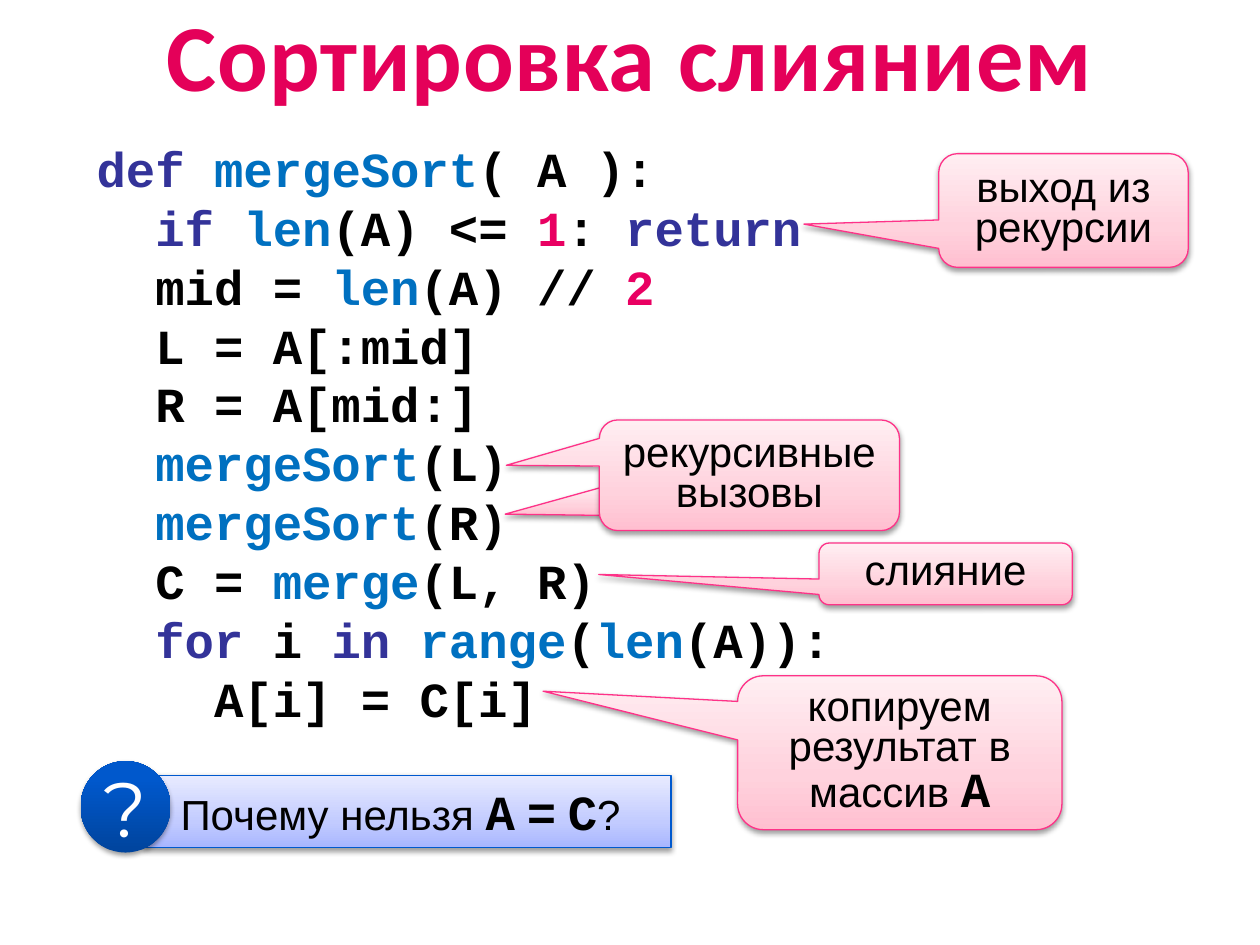
"""Build a slide on merge sort: annotated code, callouts and a question."""
from dataclasses import dataclass

from lxml import etree
from pptx import Presentation
from pptx.dml.color import RGBColor
from pptx.enum import shapes, text
from pptx.oxml import ns
from pptx.util import Pt


@dataclass(frozen=True)
class Theme:
    black: str = "000000"
    white: str = "FFFFFF"
    keyword: str = "333399"
    name: str = "0070C0"
    number: str = "E90062"
    title: str = "E40059"
    pink_line: str = "FE3288"
    blue_line: str = "0059CE"
    pink: tuple = ((0, "FFBFD0"), (35, "FFD2DD"), (100, "FFEEF2"))
    blue: tuple = ((0, "A8B6FF"), (35, "C2CBFF"), (100, "E8EBFF"))
    deep_blue: tuple = ((0, "00449D"), (80, "0058CC"), (100, "0059CD"))
    body: tuple = ("Arial", 24, False)
    code: tuple = ("Courier New", 28, True)
    heading: tuple = ("Calibri", 54, True)
    mark: tuple = ("Montserrat", 44, False)


T = Theme()


def add_run(p, words, style, colour=T.black):
    r = p.add_run()
    r.text = words
    r.font.name, size, r.font.bold = style
    r.font.size = Pt(size)
    r.font.color.rgb = RGBColor.from_string(colour)
    return r


def decorate(sp, stops, line=None):
    sp.fill.gradient()
    sp.fill.gradient_angle = 90
    stop_list = sp._element.spPr.find(".//" + ns.qn("a:gsLst"))
    stop_list.clear()
    for position, colour in stops:
        gs = etree.SubElement(stop_list, ns.qn("a:gs"), pos=str(position * 1000))
        etree.SubElement(gs, ns.qn("a:srgbClr"), val=colour)
    if line:
        sp.line.color.rgb = RGBColor.from_string(line)
        sp.line.width = Pt(0.75)
    else:
        sp.line.fill.background()
    sp.shadow.inherit = False
    effects = sp._element.spPr.find(ns.qn("a:effectLst"))
    shadow = etree.SubElement(effects, ns.qn("a:outerShdw"), blurRad=str(Pt(3.1)),
                              dist=str(Pt(1.6)), dir="5400000", rotWithShape="0")
    colour = etree.SubElement(shadow, ns.qn("a:srgbClr"), val=T.black)
    etree.SubElement(colour, ns.qn("a:alpha"), val="38000")


prs = Presentation()
prs.slide_width, prs.slide_height = Pt(720), Pt(540)
s = prs.slides.add_slide(prs.slide_layouts[5])

sp = s.shapes.title
sp.left, sp.top, sp.width, sp.height = Pt(0), Pt(0), Pt(720), Pt(61)
tf = sp.text_frame
tf.auto_size = text.MSO_AUTO_SIZE.NONE
tf.vertical_anchor = text.MSO_ANCHOR.MIDDLE
p = tf.paragraphs[0]
p.alignment = text.PP_ALIGN.CENTER
r = add_run(p, "Сортировка слиянием", T.heading, T.title)
r.font._element.set("spc", "50")

K, F, N, B = T.keyword, T.name, T.number, T.black
code_lines = [
    [("def ", K), ("mergeSort", F), ("( A ):", B)],
    [("  if ", K), ("len", F), ("(A) <= ", B), ("1", N), (": ", B), ("return", K)],
    [("  mid = ", B), ("len", F), ("(A) // ", B), ("2", N)],
    [("  L = A[:mid]", B)],
    [("  R = A[mid:]", B)],
    [("  mergeSort", F), ("(L)", B)],
    [("  mergeSort", F), ("(R)", B)],
    [("  C = ", B), ("merge", F), ("(L, R)", B)],
    [("  for ", K), ("i ", B), ("in ", K), ("range", F), ("(", B), ("len", F), ("(A)):", B)],
    [("    A[i] = C[i]", B)],
]
tf = s.shapes.add_textbox(Pt(48.2), Pt(75.6), Pt(499), Pt(346.3)).text_frame
tf.word_wrap = True
for i, line in enumerate(code_lines):
    p = tf.add_paragraph() if i else tf.paragraphs[0]
    for words, colour in line:
        add_run(p, words, T.code, colour)

builder = s.shapes.build_freeform(Pt(343.4), Pt(294.5))
builder.add_line_segments([(Pt(343.4), Pt(278.6)), (Pt(288.7), Pt(293.8))], close=True)
decorate(builder.convert_to_shape(), T.pink, T.pink_line)

callouts = [
    ((468, 310.3, 144.7, 35.3), (-1.37, 0.01), [("слияние", T.body)]),
    ((536.4, 87.8, 142.6, 65), (-1.04, 0.12), [("выход из рекурсии", T.body)]),
    ((342.5, 240, 171.5, 63.2), (-0.81, -0.09), [("рекурсивные вызовы", T.body)]),
    ((421.5, 386.2, 185.3, 87.9), (-1.1, -0.4),
     [("копируем результат в массив ", T.body), ("A", T.code)]),
]
for box, tip, runs in callouts:
    sp = s.shapes.add_shape(shapes.MSO_SHAPE.ROUNDED_RECTANGULAR_CALLOUT, *map(Pt, box))
    sp.adjustments[0], sp.adjustments[1] = tip
    decorate(sp, T.pink, T.pink_line)
    tf = sp.text_frame
    tf.word_wrap = True
    tf.vertical_anchor = text.MSO_ANCHOR.MIDDLE
    p = tf.paragraphs[0]
    p.alignment = text.PP_ALIGN.CENTER
    p.line_spacing = 0.8
    for words, style in runs:
        add_run(p, words, style)

sp = s.shapes.add_shape(shapes.MSO_SHAPE.RECTANGLE, Pt(82.8), Pt(443), Pt(300.6), Pt(41.2))
decorate(sp, T.blue, T.blue_line)
tf = sp.text_frame
tf.word_wrap = True
tf.vertical_anchor = text.MSO_ANCHOR.TOP
p = tf.paragraphs[0]
p.alignment = text.PP_ALIGN.LEFT
for words, style in [("  Почему нельзя ", T.body), ("A", T.code), (" ", T.body), ("=", T.code),
                     (" ", T.body), ("C", T.code), ("?", T.body)]:
    add_run(p, words, style)

sp = s.shapes.add_shape(shapes.MSO_SHAPE.OVAL, Pt(46), Pt(434.9), Pt(51.4), Pt(52.3))
decorate(sp, T.deep_blue)
tf = sp.text_frame
tf.word_wrap = False
tf.vertical_anchor = text.MSO_ANCHOR.MIDDLE
p = tf.paragraphs[0]
p.alignment = text.PP_ALIGN.CENTER
add_run(p, "?", T.mark, T.white)

prs.save("out.pptx")
